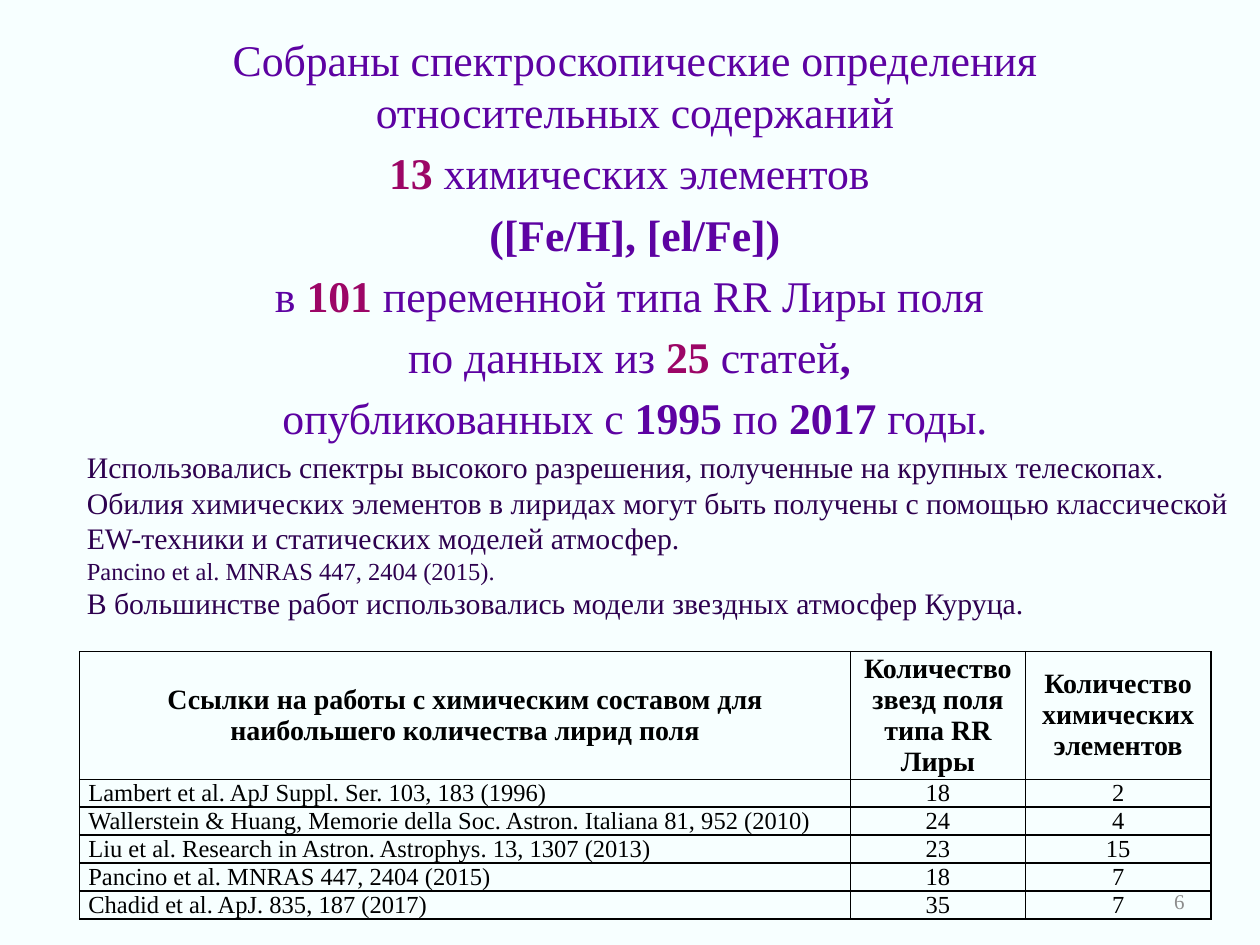
from lxml.etree import SubElement
from pptx import Presentation
from pptx.dml.color import RGBColor
from pptx.enum.text import MSO_ANCHOR as Anchor, MSO_AUTO_SIZE as AutoSize, PP_ALIGN as Align
from pptx.oxml.ns import qn
from pptx.util import Pt

FONT = "Times New Roman"
COLORS = {
    "background": "F7FFFF",
    "summary": "5D02A2",
    "count": "9C0666",
    "notes": "2E014F",
    "table": "000000",
    "number": "8C8C8C",
}
SUMMARY = [
    [("Собраны спектроскопические определения относительных содержаний", "summary", False)],
    [("13 ", "count", True), ("химических элементов ", "summary", False)],
    [("([Fe/H], [el/Fe])", "summary", True)],
    [("в ", "summary", False), ("101 ", "count", True),
     ("переменной типа RR Лиры поля ", "summary", False)],
    [("по данных из ", "summary", False), ("25 ", "count", True),
     ("статей", "summary", False), (", ", "summary", True)],
    [("опубликованных с ", "summary", False), ("1995", "summary", True),
     (" по ", "summary", False), ("2017 ", "summary", True), ("годы.", "summary", False)],
]
NOTES = [
    ("Использовались спектры высокого разрешения, полученные на крупных телескопах.", 17),
    ("Обилия химических элементов в лиридах могут быть получены с помощью "
     "классической EW-техники и статических моделей атмосфер.", 17),
    ("Pancino et al. MNRAS 447, 2404 (2015).", 14),
    ("В большинстве работ использовались модели звездных атмосфер Куруца.", 17),
]
SOURCES = [
    ("Ссылки на работы с химическим составом для наибольшего количества лирид поля",
     "Количество звезд поля типа RR Лиры", "Количество химических элементов"),
    ("Lambert et al. ApJ Suppl. Ser. 103, 183 (1996)", "18", "2"),
    ("Wallerstein & Huang, Memorie della Soc. Astron. Italiana 81, 952 (2010)", "24", "4"),
    ("Liu et al. Research in Astron. Astrophys. 13, 1307 (2013)", "23", "15"),
    ("Pancino et al. MNRAS 447, 2404 (2015)", "18", "7"),
    ("Chadid et al. ApJ. 835, 187 (2017)", "35", "7"),
]


def style_run(run, size, color, bold=False):
    run.font.name = FONT
    run.font.size = Pt(size)
    run.font.bold = bold
    run.font.color.rgb = RGBColor.from_string(COLORS[color])


def remove_bullet(paragraph):
    properties = paragraph._p.get_or_add_pPr()
    properties.set("marL", "0")
    properties.set("indent", "0")
    SubElement(properties, qn("a:buNone"))


def add_borders(cell):
    properties = cell._tc.get_or_add_tcPr()
    for position, side in enumerate(("a:lnL", "a:lnR", "a:lnT", "a:lnB")):
        line = properties.makeelement(qn(side), {"w": str(Pt(1))})
        fill = SubElement(line, qn("a:solidFill"))
        SubElement(fill, qn("a:srgbClr"), val=COLORS["table"])
        properties.insert(position, line)


def fill_summary(slide, left, top, width, height):
    summary = slide.placeholders[1]
    summary.left, summary.top = Pt(left), Pt(top)
    summary.width, summary.height = Pt(width), Pt(height)
    frame = summary.text_frame
    frame.auto_size = AutoSize.NONE
    for index, parts in enumerate(SUMMARY):
        paragraph = frame.add_paragraph() if index else frame.paragraphs[0]
        paragraph.alignment = Align.CENTER
        paragraph.space_before = Pt(5)
        remove_bullet(paragraph)
        for text, color, bold in parts:
            run = paragraph.add_run()
            run.text = text
            style_run(run, 25, color, bold)


def add_sources(slide, left, top, width, height):
    table = slide.shapes.add_table(len(SOURCES), 3, Pt(left), Pt(top), Pt(width), Pt(height)).table
    counts = (100, 106)
    for column, column_width in zip(table.columns, (width - sum(counts), *counts)):
        column.width = Pt(column_width)
    row_height = 16
    for index, (row, texts) in enumerate(zip(table.rows, SOURCES)):
        header = index == 0
        row.height = Pt(height - row_height * (len(SOURCES) - 1) if header else row_height)
        for position, (cell, text) in enumerate(zip(row.cells, texts)):
            cell.fill.background()
            cell.vertical_anchor = Anchor.MIDDLE
            cell.margin_left = cell.margin_right = Pt(5)
            cell.margin_top = cell.margin_bottom = 0
            cell.text_frame.text = text
            paragraph = cell.text_frame.paragraphs[0]
            paragraph.alignment = Align.CENTER if header or position else Align.JUSTIFY
            style_run(paragraph.runs[0], 16 if header else 14, "table", header)
            add_borders(cell)


def add_number(slide, left, top, width, height):
    frame = slide.shapes.add_textbox(Pt(left), Pt(top), Pt(width), Pt(height)).text_frame
    frame.word_wrap = True
    frame.vertical_anchor = Anchor.MIDDLE
    frame.text = "6"
    frame.paragraphs[0].alignment = Align.RIGHT
    style_run(frame.paragraphs[0].runs[0], 12, "number")


def add_notes(slide, left, top, width, height):
    frame = slide.shapes.add_textbox(Pt(left), Pt(top), Pt(width), Pt(height)).text_frame
    frame.word_wrap = True
    frame.text = "\n".join(text for text, _ in NOTES)
    for paragraph, (_, size) in zip(frame.paragraphs, NOTES):
        style_run(paragraph.runs[0], size, "notes")


def main():
    deck = Presentation()
    deck.slide_width, deck.slide_height = Pt(720), Pt(540)
    slide = deck.slides.add_slide(deck.slide_layouts[1])
    slide.background.fill.solid()
    slide.background.fill.fore_color.rgb = RGBColor.from_string(COLORS["background"])
    empty_title = slide.shapes.title.element
    empty_title.getparent().remove(empty_title)
    fill_summary(slide, 87.8, 15, 550, 232.5)
    add_sources(slide, 45.5, 372.3, 646.5, 153)
    add_number(slide, 516, 500.5, 168, 28.75)
    add_notes(slide, 42.5, 252.8, 669, 110)
    deck.save("out.pptx")


if __name__ == "__main__":
    main()
